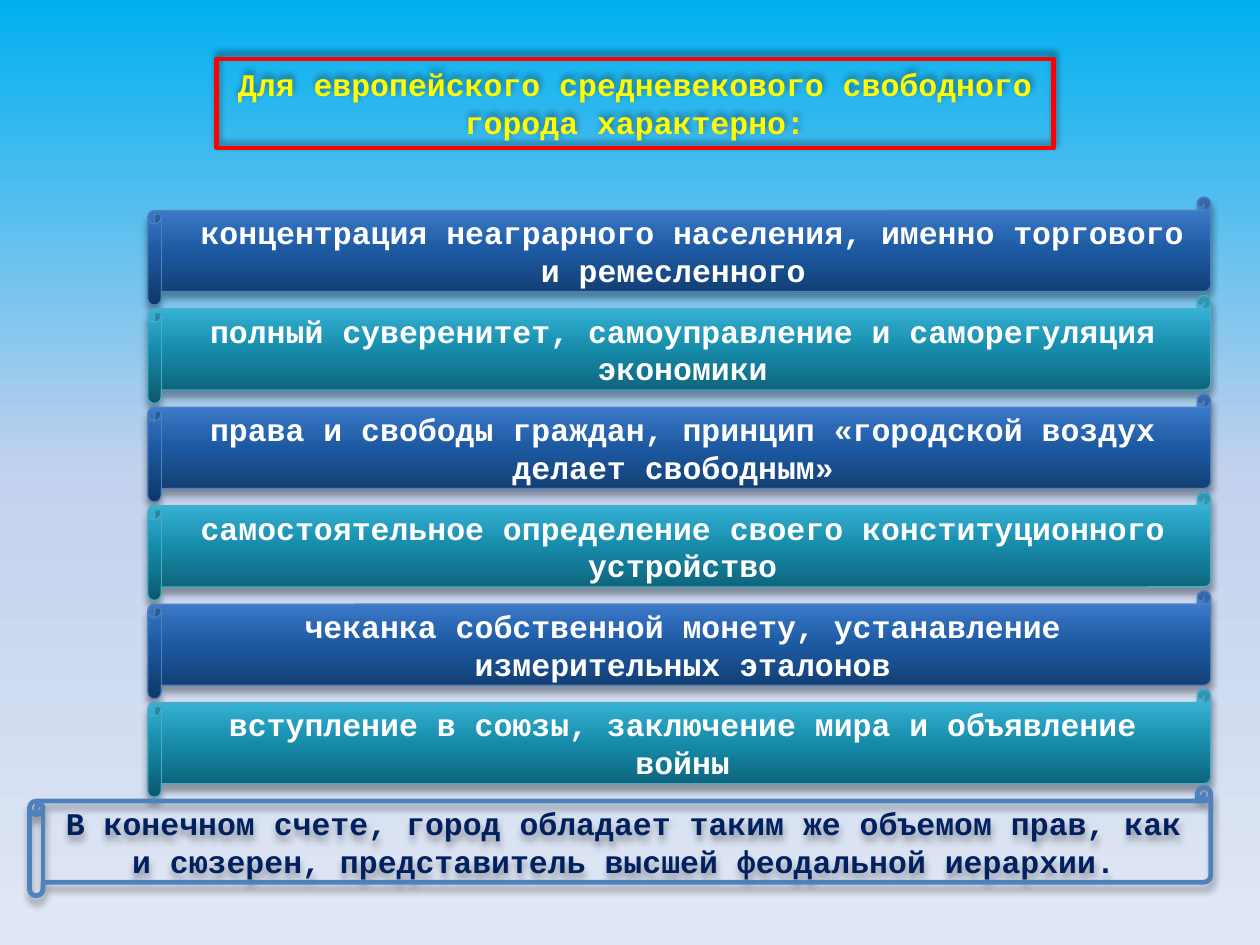
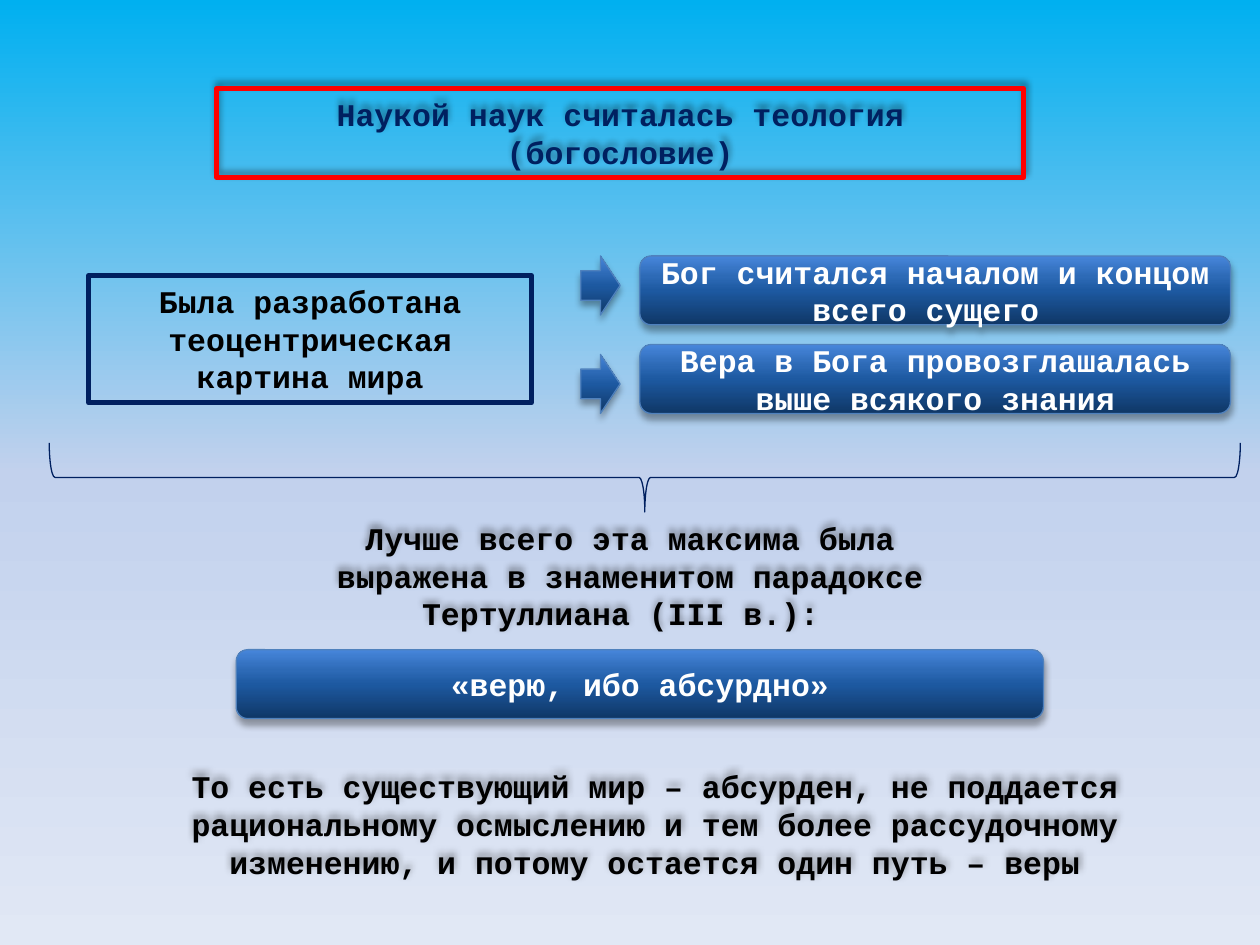
from dataclasses import dataclass

from lxml.etree import SubElement
from pptx import Presentation
from pptx.dml.color import RGBColor
from pptx.dml.fill import FillFormat
from pptx.enum.shapes import MSO_SHAPE as Preset
from pptx.enum.text import MSO_ANCHOR as Anchor, PP_ALIGN as Align
from pptx.oxml.ns import qn
from pptx.oxml.xmlchemy import BaseOxmlElement as Element
from pptx.shapes.autoshape import Shape
from pptx.slide import Slide
from pptx.util import Pt

RED, NAVY, YELLOW, WHITE, BLACK = "FF0000", "002060", "FFFF00", "FFFFFF", "000000"
BLUE_EDGE, TEAL_EDGE = "4F81BD", "4BACC6"
FONT_FORMAT = {"name": "Courier New", "size": Pt(18), "bold": True}

Stops = tuple[tuple[int, str], ...]
SKY: Stops = ((0, "00B0F0"), (50, "C2D1ED"), (100, "E1E8F5"))
BLUE: Stops = ((0, "0F3766"), (50, "1D59A1"), (70, "2D6AB6"), (100, "4786DB"))
TEAL: Stops = ((0, "0B586C"), (50, "178BAA"), (70, "279FC0"), (100, "41C1E6"))


@dataclass(frozen=True)
class Shadow:
    opacity: int
    direction: int
    blur: float = 4
    distance: float = 3


@dataclass(frozen=True)
class Style:
    preset: Preset
    text_color: str = WHITE
    gradient: Stops | None = None
    line_color: str | None = None
    line_width: float = 0.75
    shadow: Shadow | None = None
    anchor: Anchor = Anchor.MIDDLE


@dataclass(frozen=True)
class Box:
    left: float
    top: float
    width: float
    height: float


ABOVE, BELOW = Shadow(40, 270), Shadow(35, 90)
YELLOW_TITLE = Style(Preset.RECTANGLE, YELLOW, None, RED, 2.75, ABOVE, Anchor.TOP)
NAVY_TITLE = Style(Preset.RECTANGLE, NAVY, None, RED, 2.75, ABOVE, Anchor.TOP)
FRAME = Style(Preset.RECTANGLE, BLACK, None, NAVY, 2.75, None, Anchor.TOP)
PLAIN_TEXT = Style(Preset.RECTANGLE, BLACK, shadow=ABOVE, anchor=Anchor.TOP)
BLUE_SCROLL = Style(Preset.HORIZONTAL_SCROLL, WHITE, BLUE, BLUE_EDGE, shadow=BELOW)
TEAL_SCROLL = Style(Preset.HORIZONTAL_SCROLL, WHITE, TEAL, TEAL_EDGE, shadow=BELOW)
OPEN_SCROLL = Style(Preset.HORIZONTAL_SCROLL, NAVY, None, BLUE_EDGE, 2.75, BELOW)
BUTTON = Style(Preset.ROUNDED_RECTANGLE, WHITE, BLUE, BLUE_EDGE, shadow=BELOW)
ARROW = Style(Preset.RIGHT_ARROW, WHITE, BLUE, BLUE_EDGE, shadow=BELOW)
BRACE = Style(Preset.RIGHT_BRACE, NAVY, None, NAVY)

CITY_TRAITS = (
    " концентрация неаграрного населения, именно торгового и ремесленного ",
    "полный суверенитет, самоуправление и саморегуляция экономики",
    "права и свободы граждан, принцип «городской воздух делает свободным» ",
    "самостоятельное определение своего конституционного устройство",
    "чеканка собственной монету, устанавление измерительных эталонов",
    "вступление в союзы, заключение мира и объявление войны",
)
BELIEFS = (
    "Бог считался началом и концом всего сущего ",
    "Вера в Бога провозглашалась выше всякого знания",
)


def color(hex_value: str) -> RGBColor:
    return RGBColor.from_string(hex_value)


def set_gradient(fill: FillFormat, owner: Element, stops: Stops, angle: int) -> None:
    fill.gradient()
    fill.gradient_angle = angle
    stop_list = owner.xpath(".//a:gradFill/a:gsLst")[0]
    for old_stop in list(stop_list):
        stop_list.remove(old_stop)
    for position, hex_value in stops:
        stop = SubElement(stop_list, qn("a:gs"), pos=str(position * 1000))
        SubElement(stop, qn("a:srgbClr"), val=hex_value)


def set_shadow(shape: Shape, shadow: Shadow | None) -> None:
    shape.shadow.inherit = False
    if shadow is None:
        return
    effects = shape.element.xpath("./p:spPr/a:effectLst")[0]
    outer = SubElement(effects, qn("a:outerShdw"), blurRad=str(Pt(shadow.blur)),
                       dist=str(Pt(shadow.distance)), dir=str(shadow.direction * 60000),
                       rotWithShape="0")
    tint = SubElement(outer, qn("a:srgbClr"), val=BLACK)
    SubElement(tint, qn("a:alpha"), val=str(shadow.opacity * 1000))


def set_text(shape: Shape, text: str, style: Style) -> None:
    frame = shape.text_frame
    frame.word_wrap = True
    frame.vertical_anchor = style.anchor
    paragraph = frame.paragraphs[0]
    paragraph.alignment = Align.CENTER
    run = paragraph.add_run()
    run.text = text
    for name, value in FONT_FORMAT.items():
        setattr(run.font, name, value)
    run.font.color.rgb = color(style.text_color)


def draw(slide: Slide, style: Style, box: Box, text: str = "") -> Shape:
    shape = slide.shapes.add_shape(style.preset, Pt(box.left), Pt(box.top),
                                   Pt(box.width), Pt(box.height))
    if style.gradient:
        set_gradient(shape.fill, shape.element, style.gradient, 90)
    else:
        shape.fill.background()
    if style.line_color:
        shape.line.color.rgb = color(style.line_color)
        shape.line.width = Pt(style.line_width)
    else:
        shape.line.fill.background()
    set_shadow(shape, style.shadow)
    if text:
        set_text(shape, text, style)
    return shape


def add_sky_slide(presentation: Presentation) -> Slide:
    slide = presentation.slides.add_slide(presentation.slide_layouts[6])
    set_gradient(slide.background.fill, slide.element, SKY, 270)
    return slide


def build_city_slide(presentation: Presentation) -> None:
    slide = add_sky_slide(presentation)
    draw(slide, YELLOW_TITLE, Box(123.75, 33.75, 478.1, 50.9),
         "Для европейского средневекового свободного города характерно:")
    top, pitch, height = 112.5, 56.25, 61.88
    for index, trait in enumerate(CITY_TRAITS):
        style = (BLUE_SCROLL, TEAL_SCROLL)[index % 2]
        draw(slide, style, Box(84.38, top + index * pitch, 607.5, height), trait)
    draw(slide, OPEN_SCROLL, Box(16.88, top + len(CITY_TRAITS) * pitch, 675, height),
         "В конечном счете, город обладает таким же объемом прав, как и сюзерен, "
         "представитель высшей феодальной иерархии.")


def build_theology_slide(presentation: Presentation) -> None:
    slide = add_sky_slide(presentation)
    draw(slide, NAVY_TITLE, Box(123.75, 50.63, 461.25, 50.9),
         "Наукой наук считалась теология (богословие)")
    draw(slide, FRAME, Box(50.63, 157.5, 253.1, 72.7),
         "Была разработана теоцентрическая картина мира")
    for index, belief in enumerate(BELIEFS):
        draw(slide, ARROW, Box(331.88, 146.25 + index * 56.25, 22.5, 33.75))
        draw(slide, BUTTON, Box(365.63, 146.25 + index * 50.63, 337.5, 39.38), belief)
    draw(slide, PLAIN_TEXT, Box(180, 292.9, 360, 72.7),
         "Лучше всего эта максима была выражена в знаменитом парадоксе "
         "Тертуллиана (III в.): ")
    brace = draw(slide, BRACE, Box(348.75, -67.5, 39.38, 680.63))
    brace.rotation = 90
    draw(slide, BUTTON, Box(135, 371.25, 461.25, 39.38), "«верю, ибо абсурдно»")
    draw(slide, PLAIN_TEXT, Box(50.63, 434.9, 646.9, 72.7),
         "То есть существующий мир – абсурден, не поддается рациональному осмыслению "
         "и тем более рассудочному изменению, и потому остается один путь – веры")


def main() -> None:
    presentation = Presentation()
    presentation.slide_width = Pt(720)
    presentation.slide_height = Pt(540)
    build_city_slide(presentation)
    build_theology_slide(presentation)
    presentation.save("out.pptx")


if __name__ == "__main__":
    main()
